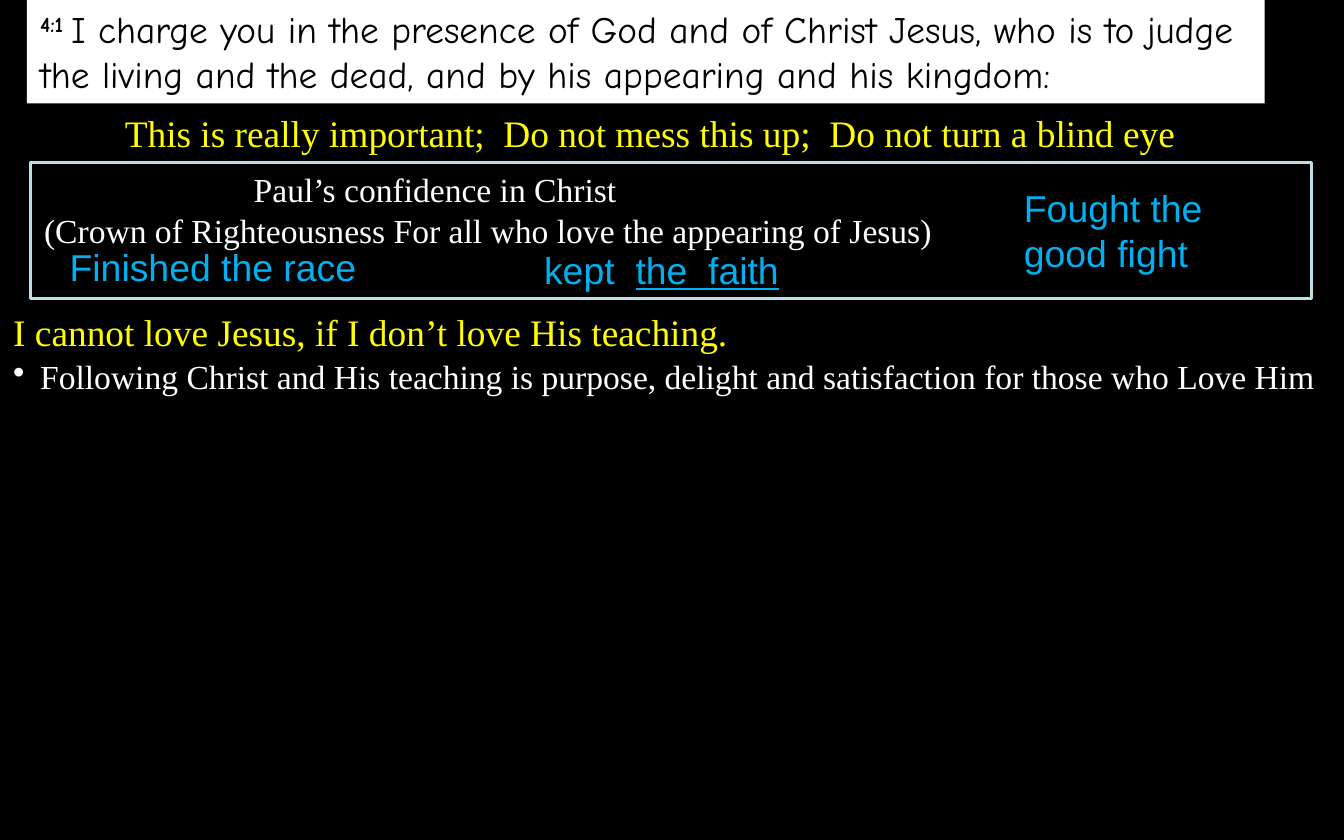
from dataclasses import dataclass

from lxml.etree import SubElement
from pptx import Presentation
from pptx.dml.color import RGBColor as RGB
from pptx.enum.shapes import MSO_SHAPE as Shape
from pptx.enum.text import MSO_ANCHOR as Anchor, PP_ALIGN as Align
from pptx.oxml.ns import qn
from pptx.util import Inches, Pt


@dataclass(frozen=True)
class Theme:
    black: RGB = RGB(0, 0, 0)
    white: RGB = RGB(255, 255, 255)
    yellow: RGB = RGB(255, 255, 0)
    blue: RGB = RGB(0x00, 0xB0, 0xF0)
    frame: RGB = RGB(0xBB, 0xE0, 0xE3)
    large: Pt = Pt(20)
    normal: Pt = Pt(18)
    verse_font: str = "Comic Neue"
    serif: str = "Times New Roman"
    sans: str = "Arial"


THEME = Theme()


def style(paragraph, font, size, color):
    paragraph.alignment = Align.LEFT
    paragraph.font.name = font
    paragraph.font.size = size
    paragraph.font.color.rgb = color


def indent(paragraph, left, first=0):
    properties = paragraph._p.get_or_add_pPr()
    properties.set("marL", str(Inches(left)))
    properties.set("indent", str(Inches(first)))
    return properties


def add_panel(slide, box):
    panel = slide.shapes.add_shape(Shape.RECTANGLE, *map(Inches, box))
    panel.shadow.inherit = False
    panel.text_frame.word_wrap = True
    panel.text_frame.vertical_anchor = Anchor.TOP
    return panel


def add_line(slide, box, text, font, size, color):
    frame = slide.shapes.add_textbox(*map(Inches, box)).text_frame
    frame.word_wrap = True
    line = frame.paragraphs[0]
    line.text = text
    style(line, font, size, color)
    return line


def add_verse(slide, box):
    panel = add_panel(slide, box)
    panel.fill.solid()
    panel.fill.fore_color.rgb = THEME.white
    panel.line.fill.background()
    verse = panel.text_frame.paragraphs[0]
    style(verse, THEME.verse_font, THEME.large, THEME.black)
    number = verse.add_run()
    number.text = "4:1\u00a0"
    number.font.bold = True
    number.font._element.set("baseline", "30000")
    verse.add_run().text = (
        "I charge you in the presence of God and of Christ Jesus, who is to judge "
        "the living and the dead, and by his appearing and his kingdom:"
    )


def add_confidence(slide, box):
    left, top, width, height = box
    panel = add_panel(slide, box)
    panel.fill.background()
    panel.line.color.rgb = THEME.frame
    panel.line.width = Pt(1.5)
    panel.text_frame.text = (
        "Paul’s confidence in Christ\n"
        "(Crown of Righteousness For all who love the appearing of Jesus)"
    )
    for paragraph in panel.text_frame.paragraphs:
        style(paragraph, THEME.serif, THEME.normal, THEME.white)
    indent(panel.text_frame.paragraphs[0], 1.56)

    deeds = [
        ("Fought the good fight", 7.29, 0.12, 2.01, 0.77),
        ("Finished the race", 0.19, 0.56, 2.77, 0.44),
        ("kept  ", 3.72, 0.58, 2.53, 0.44),
    ]
    for text, x, y, deed_width, deed_height in deeds:
        deed = add_line(slide, (left + x, top + y, deed_width, deed_height),
                        text, THEME.sans, THEME.large, THEME.blue)
    faith = deed.add_run()
    faith.text = "the  faith"
    faith.font.underline = True


def add_headline(slide, box, text):
    add_line(slide, box, text, THEME.serif, THEME.large, THEME.yellow)


def add_bullet(slide, box, text):
    point = add_line(slide, box, text, THEME.serif, THEME.normal, THEME.white)
    properties = indent(point, 0.2, -0.2)
    bullet = SubElement(properties, qn("a:buChar"))
    bullet.set("char", "•")
    properties.insert(0, bullet)


def main():
    deck = Presentation()
    deck.slide_width, deck.slide_height = Inches(10), Inches(6.25)
    slide = deck.slides.add_slide(deck.slide_layouts[6])
    slide.background.fill.solid()
    slide.background.fill.fore_color.rgb = THEME.black

    add_verse(slide, (0.2, 0, 9.21, 0.77))
    add_headline(slide, (0.83, 0.77, 9.12, 0.44),
                 "This is really important;  Do not mess this up;  Do not turn a blind eye")
    add_confidence(slide, (0.23, 1.21, 9.53, 1.01))
    add_headline(slide, (0, 2.25, 9.94, 0.44),
                 "I cannot love Jesus, if I don’t love His teaching.")
    add_bullet(slide, (0, 2.6, 10.19, 0.4),
               "Following Christ and His teaching is purpose, delight and satisfaction "
               "for those who Love Him")
    deck.save("out.pptx")


if __name__ == "__main__":
    main()
